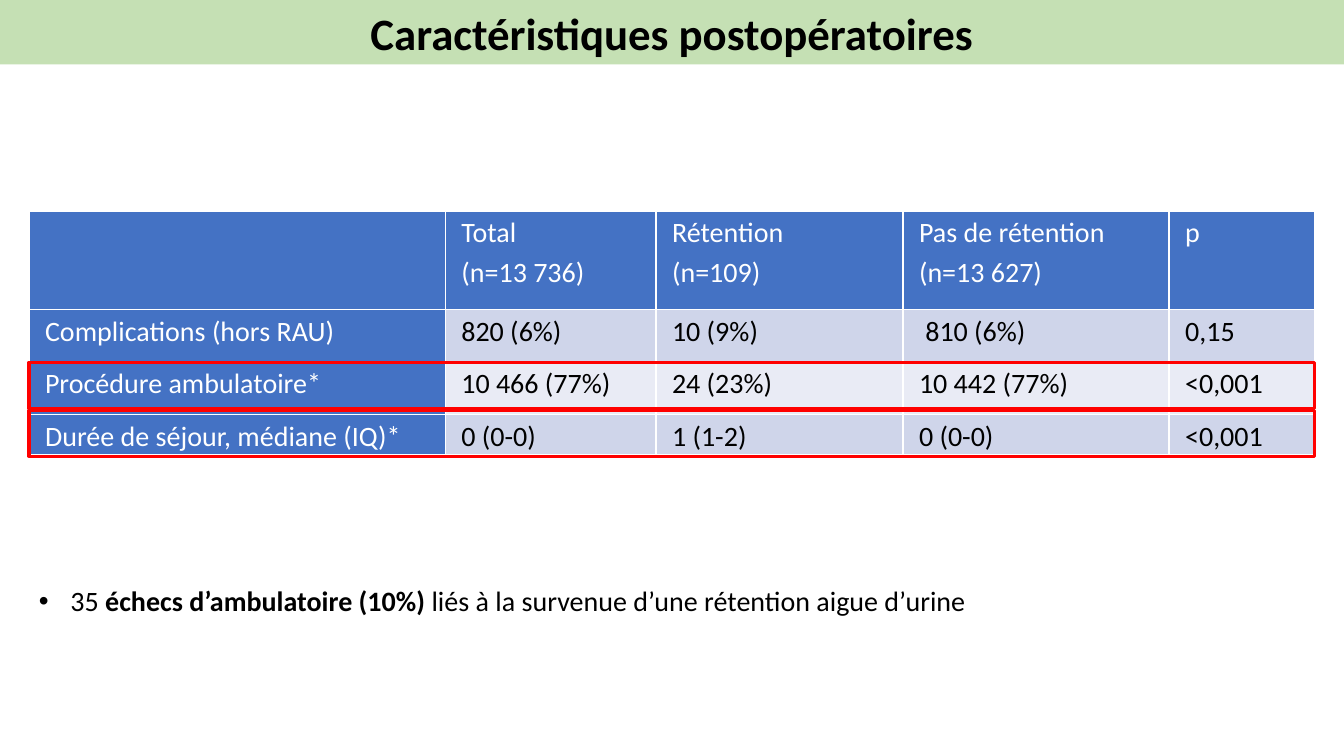
from lxml.etree import SubElement
from pptx import Presentation
from pptx.dml.color import RGBColor
from pptx.enum.shapes import MSO_SHAPE
from pptx.enum.text import MSO_ANCHOR, PP_ALIGN
from pptx.oxml.ns import qn
from pptx.util import Pt

BLACK, WHITE, GREEN, BLUE, RED = "000000", "FFFFFF", "C5E0B4", "4472C4", "FF0000"
BANDS = ["CFD5EA", "E9EBF5"]
COLUMN_WIDTHS = [297.4, 150.5, 176.4, 190.1, 103.7]
ROW_HEIGHTS = [70.6, 37.4, 37.4, 28.8]
RESULTS = [
    ["", "Total\n(n=13 736)", "Rétention\n(n=109)", "Pas de rétention (n=13 627)", "p"],
    ["Complications (hors RAU)", "820 (6%)", "10 (9%)", " 810 (6%)", "0,15"],
    ["Procédure ambulatoire*", "10 466 (77%)", "24 (23%)", "10 442 (77%)", "<0,001"],
    ["Durée de séjour, médiane (IQ)*", "0 (0-0)", "1 (1-2)", "0 (0-0)", "<0,001"],
]
FAILURES = [
    ("35 ", False),
    ("échecs d’ambulatoire (10%) ", True),
    ("liés à la survenue d’une rétention aigue d’urine", False),
]


def paint(color_format, color):
    """Set a fill's or font's colour from a hex string."""
    color_format.rgb = RGBColor.from_string(color)


def fill_solid(fill, color):
    """Make a fill solid in the given colour."""
    fill.solid()
    paint(fill.fore_color, color)


def add_run(paragraph, text, color=BLACK, size=20, bold=False):
    """Append one formatted run to a paragraph."""
    run = paragraph.add_run()
    run.text = text
    run.font.name, run.font.size, run.font.bold = "Calibri", Pt(size), bold
    paint(run.font.color, color)


def add_banner(slide, left, top, width, height):
    """Turn the title placeholder into the green banner."""
    banner = slide.shapes.title
    banner.left, banner.top, banner.width, banner.height = map(Pt, (left, top, width, height))
    fill_solid(banner.fill, GREEN)
    banner.text_frame.vertical_anchor = MSO_ANCHOR.MIDDLE
    heading = banner.text_frame.paragraphs[0]
    heading.alignment = PP_ALIGN.CENTER
    add_run(heading, "Caractéristiques postopératoires", size=32, bold=True)


def fill_cell(cell, text, fill, color):
    """Write a table cell, one paragraph per line of text."""
    fill_solid(cell.fill, fill)
    cell.margin_left = cell.margin_right = Pt(11.5)
    cell.margin_top = cell.margin_bottom = Pt(0)
    for number, line in enumerate(text.split("\n")):
        frame = cell.text_frame
        paragraph = frame.add_paragraph() if number else frame.paragraphs[0]
        paragraph.line_spacing = 1.15
        if line:
            add_run(paragraph, line, color)


def add_results(slide, left, top, width, height):
    """Add the table comparing patients with and without retention."""
    results = slide.shapes.add_table(
        len(ROW_HEIGHTS), len(COLUMN_WIDTHS), Pt(left), Pt(top), Pt(width), Pt(height)
    ).table
    results.first_col = True
    for column, column_width in zip(results.columns, COLUMN_WIDTHS):
        column.width = Pt(column_width)
    for row, row_height in zip(results.rows, ROW_HEIGHTS):
        row.height = Pt(row_height)
    for r, values in enumerate(RESULTS):
        for c, value in enumerate(values):
            is_header = r == 0 or c == 0
            fill = BLUE if is_header else BANDS[(r - 1) % 2]
            fill_cell(results.cell(r, c), value, fill, WHITE if is_header else BLACK)


def add_highlight(slide, left, top, width, height):
    """Frame a significant row in red."""
    highlight = slide.shapes.add_shape(
        MSO_SHAPE.RECTANGLE, Pt(left), Pt(top), Pt(width), Pt(height)
    )
    highlight.shadow.inherit = False
    highlight.fill.background()
    paint(highlight.line.color, RED)
    highlight.line.width = Pt(2.25)


def add_conclusion(slide, left, top, width, height):
    """Add the bulleted finding on outpatient failures."""
    conclusion = slide.shapes.add_textbox(Pt(left), Pt(top), Pt(width), Pt(height))
    conclusion.text_frame.word_wrap = True
    finding = conclusion.text_frame.paragraphs[0]
    properties = finding._p.get_or_add_pPr()
    properties.set("marL", str(Pt(22.5)))
    properties.set("indent", str(Pt(-22.5)))
    SubElement(properties, qn("a:buFont"), typeface="Arial")
    SubElement(properties, qn("a:buChar"), char="•")
    for text, bold in FAILURES:
        add_run(finding, text, bold=bold)


def main():
    """Build and save the slide."""
    deck = Presentation()
    deck.slide_width, deck.slide_height = Pt(960), Pt(540)
    slide = deck.slides.add_slide(deck.slide_layouts[5])
    left, width = 20.7, sum(COLUMN_WIDTHS)
    add_banner(slide, 0, 0, 960, 46)
    add_results(slide, left, 150.7, width, sum(ROW_HEIGHTS))
    add_conclusion(slide, left, 413.5, width, 31.5)
    for top in (258.7, 293):
        add_highlight(slide, left, top, width, 33)
    deck.save("out.pptx")


if __name__ == "__main__":
    main()
